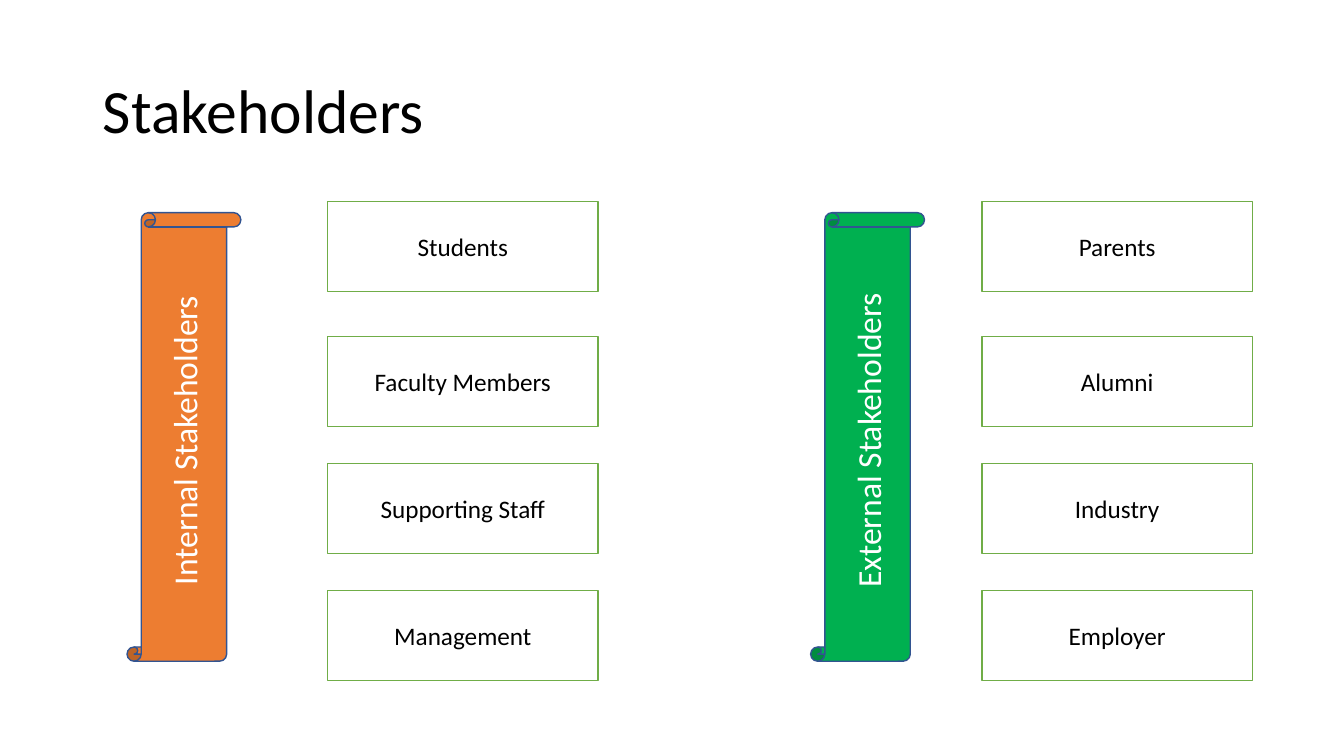
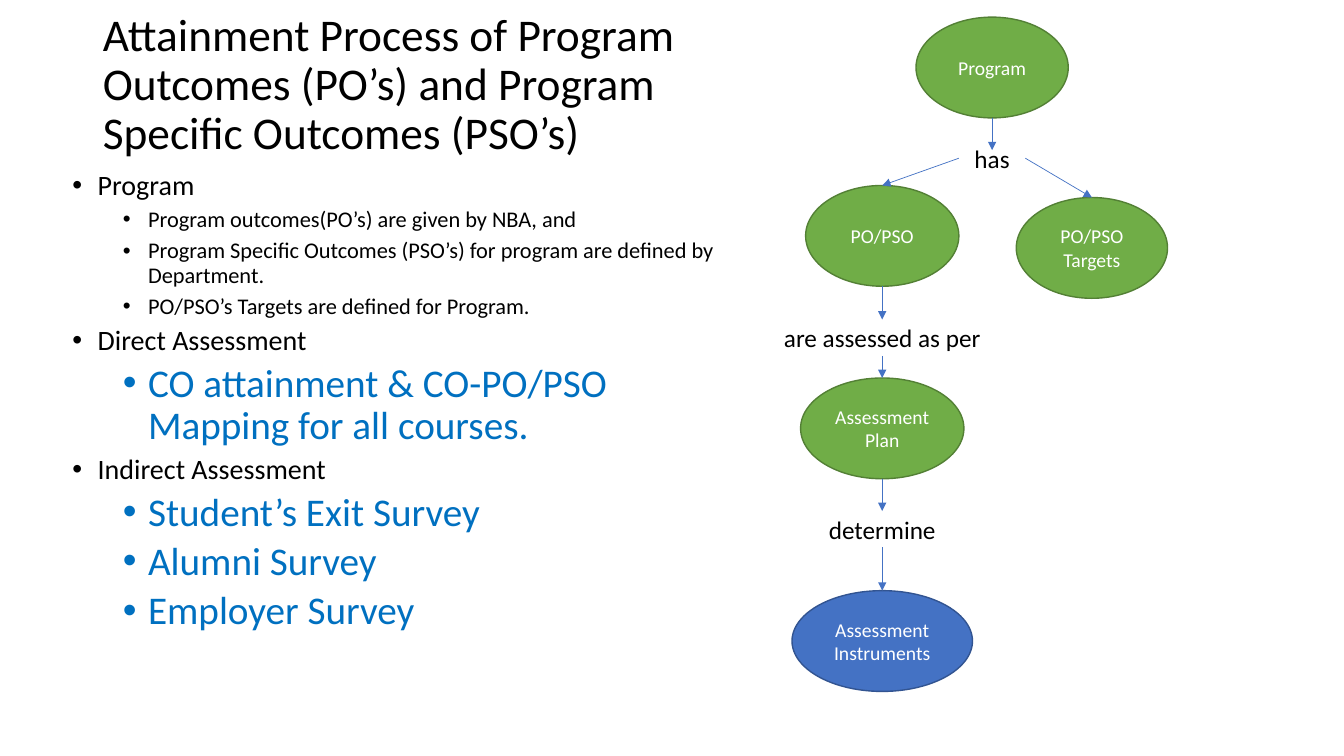
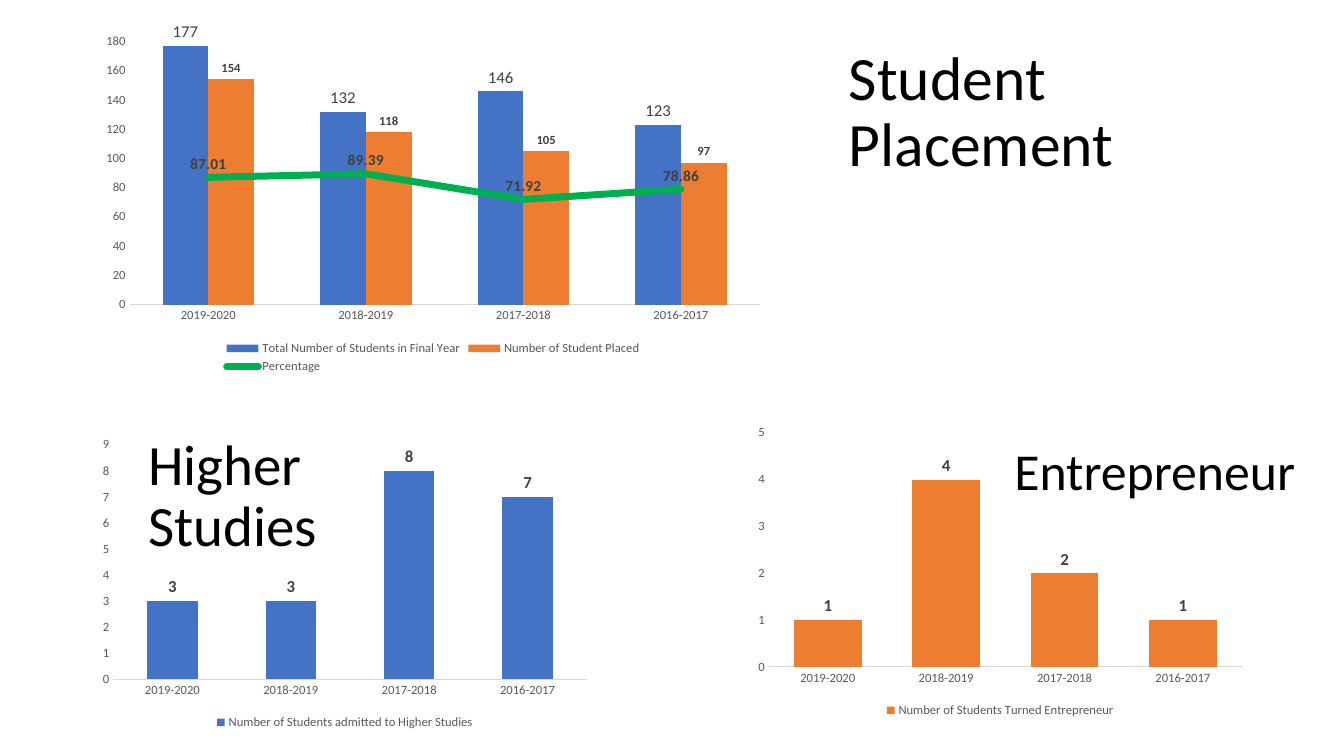
import pptx
import pptx.chart.data
import pptx.dml.color
import pptx.enum.chart
import pptx.enum.shapes
import pptx.enum.text
import pptx.oxml
import pptx.oxml.ns
import pptx.util
from lxml import etree

Inches = pptx.util.Inches
Pt = pptx.util.Pt
qn = pptx.oxml.ns.qn
KIND = pptx.enum.shapes.MSO_SHAPE
ALIGN = pptx.enum.text.PP_ALIGN

FONT = "Calibri"
HUES = {
    "white": "FFFFFF", "black": "000000", "blue": "4472C4", "navy": "325491",
    "green": "70AD47", "moss": "538035", "leaf": "00B050", "orange": "ED7D31",
    "sky": "0070C0", "axis": "D9D9D9", "grey": "595959", "dark": "404040",
}
YEARS = ["2019-2020", "2018-2019", "2017-2018", "2016-2017"]


def hue(name):
    return pptx.dml.color.RGBColor.from_string(HUES[name])


def style(font, size, color="black", bold=False):
    font.name, font.size, font.bold = FONT, Pt(size), bold
    font.color.rgb = hue(color)


def write(shape, text, size=18, color="black", align=ALIGN.LEFT, space=None, inset=0.1):
    frame = shape.text_frame
    frame.word_wrap = True
    frame.auto_size = pptx.enum.text.MSO_AUTO_SIZE.NONE
    frame.vertical_anchor = pptx.enum.text.MSO_ANCHOR.MIDDLE
    frame.margin_left = Inches(inset)
    frame.text = text
    para = frame.paragraphs[0]
    para.alignment = align
    if space:
        para.line_spacing = space
    style(para.runs[0].font, size, color)


def place(shape, box):
    shape.left, shape.top, shape.width, shape.height = map(Inches, box)


def start(deck, title, box, size=44):
    """Add a title-only slide with its title set in the given box."""
    slide = deck.slides.add_slide(deck.slide_layouts[5])
    place(slide.shapes.title, box)
    write(slide.shapes.title, title, size, space=0.9)
    return slide


def block(shapes, kind, box, text, fill=None, line="white", **form):
    shape = shapes.add_shape(kind, *map(Inches, box))
    shape.shadow.inherit = False
    if fill:
        shape.fill.solid()
        shape.fill.fore_color.rgb = hue(fill)
    else:
        shape.fill.background()
    shape.line.color.rgb = hue(line)
    shape.line.width = Pt(1)
    write(shape, text, align=ALIGN.CENTER, **form)
    return shape


def label(slide, box, text, size, **form):
    write(slide.shapes.add_textbox(*map(Inches, box)), text, size, **form)


# Stakeholders

def party(slide, left, gap, name, fill, members):
    """Draw a scroll and, at a gap to its right, a column of members."""
    shapes = slide.shapes.add_group_shape().shapes
    for top, text in zip((2, 3.34, 4.6, 5.86), members):
        block(shapes, KIND.RECTANGLE, (left + gap, top, 2.68, 0.89), text,
              "white", "green")
    scroll = block(shapes, KIND.VERTICAL_SCROLL, (left, 2.11, 1.13, 4.45), name,
                   fill, "navy", size=24, color="white")
    scroll.element.find(".//" + qn("a:bodyPr")).set("vert", "vert270")


def stakes(deck):
    slide = start(deck, "Stakeholders", (0.92, 0.4, 11.5, 1.45))
    party(slide, 1.26, 1.99, "Internal Stakeholders", "orange",
          ["Students", "Faculty Members", "Supporting Staff", "Management"])
    party(slide, 8.04, 1.7, "External Stakeholders", "leaf",
          ["Parents", "Alumni", "Industry", "Employer"])


# Attainment process

def points(slide, box, items):
    frame = slide.shapes.add_textbox(*map(Inches, box)).text_frame
    frame.word_wrap = True
    for i, (level, text, size, color) in enumerate(items):
        para = frame.add_paragraph() if i else frame.paragraphs[0]
        para.level = level
        para.line_spacing = 0.9
        para.space_before = Pt(5 if i else 0)
        props = para._p.get_or_add_pPr()
        props.set("marL", str(Inches(0.25 + 0.5 * level)))
        props.set("indent", str(Inches(-0.25)))
        etree.SubElement(props, qn("a:buFont")).set("typeface", "Arial")
        etree.SubElement(props, qn("a:buChar")).set("char", "•")
        run = para.add_run()
        run.text = text
        style(run.font, size, color)


def oval(slide, mid, top, width, text, fill="green", line="moss"):
    return block(slide.shapes, KIND.OVAL, (mid - width / 2, top, width, 1), text,
                 fill, line, size=14, color="white")


def verb(slide, mid, top, text, width=2.18, height=0.36):
    return block(slide.shapes, KIND.RECTANGLE, (mid - width / 2, top, width, height), text)


def spot(shape, side):
    """Return the middle of a side: 0 top, 1 left, 2 bottom, 3 right."""
    across = (0.5, 0, 0.5, 1)[side]
    down = (0, 0.5, 1, 0.5)[side]
    return (int(shape.left + across * shape.width),
            int(shape.top + down * shape.height))


def arrow(slide, tail, side, head):
    """Point from a side of one shape to the top of another."""
    line = slide.shapes.add_connector(pptx.enum.shapes.MSO_CONNECTOR.STRAIGHT,
                                      *spot(tail, side), *spot(head, 0))
    if tail.auto_shape_type == KIND.RECTANGLE:
        line.begin_connect(tail, side)
    line.end_connect(head, 0)
    line.line.color.rgb = hue("blue")
    line.line.width = Pt(0.5)
    props = line.element.spPr
    etree.SubElement(props.find(qn("a:ln")), qn("a:tailEnd")).set("type", "triangle")
    etree.SubElement(props, qn("a:effectLst"))


def flow(slide, mid):
    """Draw the process chart around its main column."""
    top = oval(slide, mid + 1.09, 0.17, 1.51, "Program")
    has = verb(slide, mid + 1.09, 1.49, "has", 0.66, 0.16)
    goal = oval(slide, mid + 2.08, 1.96, 1.5, "PO/PSO Targets")
    chain = [
        oval(slide, mid, 1.84, 1.52, "PO/PSO"),
        verb(slide, mid, 3.17, "are assessed as per"),
        oval(slide, mid, 3.75, 1.62, "Assessment Plan"),
        verb(slide, mid, 5.07, "determine"),
        oval(slide, mid, 5.86, 1.79, "Assessment Instruments", "blue", "navy"),
    ]
    arrow(slide, top, 2, has)
    arrow(slide, has, 1, chain[0])
    arrow(slide, has, 3, goal)
    for tail, head in zip(chain, chain[1:]):
        arrow(slide, tail, 2, head)


def process(deck):
    slide = start(deck, "Attainment Process of Program Outcomes (PO’s) and "
                  "Program Specific Outcomes (PSO’s)", (0.92, 0.07, 6.52, 1.56), 32.4)
    head, note, key = (1, 20, "black"), (2, 16, "black"), (2, 28, "sky")
    items = [
        (head, "Program"),
        (note, "Program outcomes(PO’s) are given by NBA, and"),
        (note, "Program Specific Outcomes (PSO’s) for program are defined by Department."),
        (note, "PO/PSO’s Targets are defined for Program."),
        (head, "Direct Assessment"),
        (key, "CO attainment & CO-PO/PSO Mapping for all courses."),
        (head, "Indirect Assessment"),
        (key, "Student’s Exit Survey"),
        (key, "Alumni Survey"),
        (key, "Employer Survey"),
    ]
    points(slide, (0.12, 1.65, 7.22, 5.71),
           [(level, text, size, color) for (level, size, color), text in items])
    flow(slide, 8.75)


# Placement charts

def tags(series, size, bold, where):
    marks = series.data_labels
    marks.show_value = True
    marks.number_format, marks.number_format_is_linked = "General", False
    marks.position = where
    style(marks.font, size, "dark", bold)


def bars(slide, box, gap, top, step, rows):
    """Add a column chart; rows hold name, values, colour, label size, bold."""
    data = pptx.chart.data.CategoryChartData()
    data.categories = YEARS
    for name, vals, *_ in rows:
        data.add_series(name, vals)
    chart = slide.shapes.add_chart(pptx.enum.chart.XL_CHART_TYPE.COLUMN_CLUSTERED,
                                   *map(Inches, box), data).chart
    style(chart.font, 10)
    chart.has_title = False
    chart.has_legend = True
    chart.legend.position = pptx.enum.chart.XL_LEGEND_POSITION.BOTTOM
    chart.legend.include_in_layout = False
    style(chart.legend.font, 9, "grey")
    for axis in (chart.category_axis, chart.value_axis):
        axis.has_major_gridlines = False
        axis.major_tick_mark = pptx.enum.chart.XL_TICK_MARK.NONE
        style(axis.tick_labels.font, 9, "grey")
    chart.category_axis.format.line.color.rgb = hue("axis")
    chart.category_axis.format.line.width = Pt(0.75)
    scale = chart.value_axis
    scale.format.line.fill.background()
    scale.minimum_scale, scale.maximum_scale, scale.major_unit = 0, top, step
    plot = chart.plots[0]
    plot.vary_by_categories = False
    plot.gap_width, plot.overlap = gap, 0
    for series, (_, _, color, size, bold) in zip(plot.series, rows):
        series.format.fill.solid()
        series.format.fill.fore_color.rgb = hue(color)
        tags(series, size, bold, pptx.enum.chart.XL_LABEL_POSITION.OUTSIDE_END)
    return chart


def trend(chart, color, size):
    """Turn the last column series into a line on the same axes."""
    cols = chart._element.find(".//" + qn("c:barChart"))
    row = cols.findall(qn("c:ser"))[-1]
    for name in ("c:invertIfNegative", "c:spPr", "c:dLbls"):
        for part in row.findall(qn(name)):
            row.remove(part)
    ids = "".join(f'<c:axId val="{axis.get("val")}"/>' for axis in cols.findall(qn("c:axId")))
    plot = pptx.oxml.parse_xml(
        f'<c:lineChart {pptx.oxml.ns.nsdecls("c")}><c:grouping val="standard"/>'
        f'<c:varyColors val="0"/><c:marker val="1"/>{ids}</c:lineChart>')
    plot.insert(2, row)
    cols.addnext(plot)
    series = chart.plots[1].series[0]
    series.smooth = False
    series.marker.style = pptx.enum.chart.XL_MARKER_STYLE.NONE
    series.format.line.color.rgb = hue(color)
    series.format.line.width = Pt(5)
    row.find(qn("c:spPr")).find(qn("a:ln")).set("cap", "rnd")
    tags(series, size, True, pptx.enum.chart.XL_LABEL_POSITION.ABOVE)


def results(deck):
    slide = start(deck, "Student Placement", (8.32, 0.4, 4.09, 1.45))
    chart = bars(slide, (0.92, 0.22, 6.75, 3.53), 145, 180, 20, [
        ("Total Number of Students in Final Year", (177, 132, 146, 123), "blue", 12, False),
        ("Number of Student Placed", (154, 118, 105, 97), "orange", 9, True),
        ("Percentage", (87.01, 89.39, 71.92, 78.86), "leaf", 11, True),
    ])
    trend(chart, "leaf", 11)
    bars(slide, (0.92, 4.28, 5, 3), 135, 9, 1, [
        ("Number of Students admitted to Higher Studies", (3, 3, 8, 7), "blue", 12, True)])
    label(slide, (1.37, 4.21, 1.89, 1.45), "Higher Studies", 40.7, space=0.9)
    label(slide, (9.83, 4.38, 3.29, 0.68), "Entrepreneur", 37, space=0.8, inset=0.23)
    bars(slide, (7.42, 4.16, 5, 3), 75, 5, 1, [
        ("Number of Students Turned Entrepreneur", (1, 4, 2, 1), "orange", 12, True)])


def main():
    deck = pptx.Presentation()
    deck.slide_width, deck.slide_height = Inches(13.33), Inches(7.5)
    for build in (stakes, process, results):
        build(deck)
    deck.save("out.pptx")


if __name__ == "__main__":
    main()
